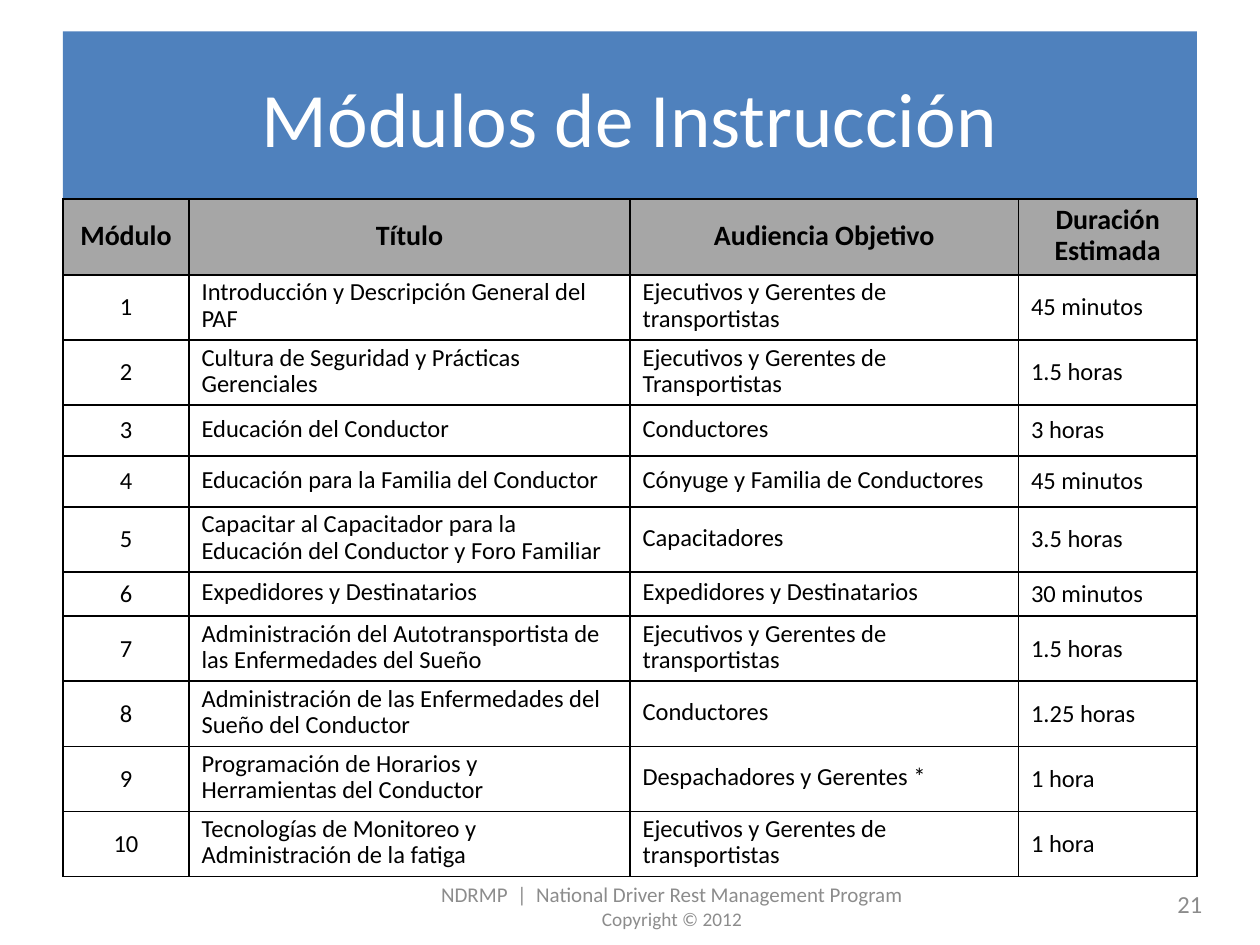
from dataclasses import dataclass

from lxml.etree import SubElement
from pptx import Presentation
from pptx.dml.color import RGBColor as RGB
from pptx.enum.shapes import MSO_SHAPE as SHAPE
from pptx.enum.text import MSO_ANCHOR as ANCHOR, PP_ALIGN as ALIGN
from pptx.oxml.ns import qn
from pptx.util import Pt


@dataclass(frozen=True)
class Theme:
    font: str = "Calibri"
    banner: RGB = RGB(0x4F, 0x81, 0xBD)
    header: RGB = RGB(0xA6, 0xA6, 0xA6)
    white: RGB = RGB(0xFF, 0xFF, 0xFF)
    black: RGB = RGB(0, 0, 0)
    muted: RGB = RGB(0x8C, 0x8C, 0x8C)
    title: int = 44
    head: int = 16
    body: int = 14
    footer: int = 12
    copyright: int = 11


THEME = Theme()
HEADERS = ("Módulo", "Título", "Audiencia Objetivo", "Duración Estimada")
MODULES = (
    ("Introducción y Descripción General del PAF", "Ejecutivos y Gerentes de transportistas", "45 minutos"),
    ("Cultura de Seguridad y Prácticas Gerenciales", "Ejecutivos y Gerentes de Transportistas", "1.5 horas"),
    ("Educación del Conductor", "Conductores", "3 horas"),
    ("Educación para la Familia del Conductor", "Cónyuge y Familia de Conductores", "45 minutos"),
    ("Capacitar al Capacitador para la Educación del Conductor y Foro Familiar", "Capacitadores", "3.5 horas"),
    ("Expedidores y Destinatarios", "Expedidores y Destinatarios", "30 minutos"),
    ("Administración del Autotransportista de las Enfermedades del Sueño",
     "Ejecutivos y Gerentes de transportistas", "1.5 horas"),
    ("Administración de las Enfermedades del Sueño del Conductor", "Conductores", "1.25 horas"),
    ("Programación de Horarios y Herramientas del Conductor", "Despachadores y Gerentes *", "1 hora"),
    ("Tecnologías de Monitoreo y Administración de la fatiga", "Ejecutivos y Gerentes de transportistas", "1 hora"),
)
COLUMN_WIDTHS = (72, 252, 222, 102)
HEADER_HEIGHT = 43.2
ROW_HEIGHT = 37.2
SHORT_ROWS = {3: 29.1, 4: 29.1, 6: 25.2}


def write(p, text, size, color=THEME.black, bold=False, align=ALIGN.LEFT, spacing=None):
    p.alignment = align
    if spacing:
        p.line_spacing = Pt(spacing)
    r = p.add_run()
    r.text = text
    r.font.name = THEME.font
    r.font.size = Pt(size)
    r.font.bold = bold
    r.font.color.rgb = color


def add_text_frame(slide, box):
    tf = slide.shapes.add_textbox(*map(Pt, box)).text_frame
    tf.word_wrap = True
    tf.vertical_anchor = ANCHOR.MIDDLE
    tf.margin_top = tf.margin_bottom = 0
    return tf


def add_banner(slide, box):
    sp = slide.shapes.add_shape(SHAPE.RECTANGLE, *map(Pt, box))
    sp.shadow.inherit = False
    sp.fill.solid()
    sp.fill.fore_color.rgb = THEME.banner
    sp.line.fill.background()
    left, top, width, height = box
    tf = add_text_frame(slide, (left, top + 3.6, width, height - 5.8))
    write(tf.paragraphs[0], "Módulos de Instrucción", THEME.title, color=THEME.white, align=ALIGN.CENTER)


def add_borders(cell):
    props = cell._tc.get_or_add_tcPr()
    for index, side in enumerate(("a:lnL", "a:lnR", "a:lnT", "a:lnB")):
        ln = props.makeelement(qn(side), {"w": str(Pt(1))})
        fill = SubElement(ln, qn("a:solidFill"))
        SubElement(fill, qn("a:srgbClr"), val=str(THEME.black))
        props.insert(index, ln)


def fill_cell(cell, text, fill=None, **text_format):
    cell.vertical_anchor = ANCHOR.MIDDLE
    if fill is None:
        cell.fill.background()
    else:
        cell.fill.solid()
        cell.fill.fore_color.rgb = fill
    write(cell.text_frame.paragraphs[0], text, **text_format)
    add_borders(cell)


def add_modules_table(slide, box):
    frame = slide.shapes.add_table(len(MODULES) + 1, len(HEADERS), *map(Pt, box))
    table = frame.table
    table.horz_banding = False
    for column, width in zip(table.columns, COLUMN_WIDTHS):
        column.width = Pt(width)
    table.rows[0].height = Pt(HEADER_HEIGHT)
    for c, text in enumerate(HEADERS):
        fill_cell(table.cell(0, c), text, fill=THEME.header, size=THEME.head,
                  bold=True, align=ALIGN.CENTER, spacing=18)
    aligns = (ALIGN.CENTER, ALIGN.LEFT, ALIGN.LEFT, ALIGN.LEFT)
    spacings = (None, 15, 15, None)
    for number, module in enumerate(MODULES, 1):
        table.rows[number].height = Pt(SHORT_ROWS.get(number, ROW_HEIGHT))
        for c, text in enumerate((str(number), *module)):
            fill_cell(table.cell(number, c), text, size=THEME.body, align=aligns[c], spacing=spacings[c])


def add_footer(slide, box):
    tf = add_text_frame(slide, box)
    write(tf.paragraphs[0], "NDRMP  |  National Driver Rest Management Program",
          THEME.footer, color=THEME.muted, align=ALIGN.CENTER)
    write(tf.add_paragraph(), "Copyright © 2012", THEME.copyright, color=THEME.muted, align=ALIGN.CENTER)


def add_slide_number(slide, box):
    tf = add_text_frame(slide, box)
    write(tf.paragraphs[0], "21", THEME.body, color=THEME.muted, align=ALIGN.RIGHT)


def main():
    prs = Presentation()
    prs.slide_width, prs.slide_height = Pt(720), Pt(540)
    slide = prs.slides.add_slide(prs.slide_layouts[6])
    add_banner(slide, (36, 18, 648, 95.8))
    add_slide_number(slide, (526.3, 501.8, 167.8, 28.8))
    add_footer(slide, (216, 503.6, 336, 28))
    add_modules_table(slide, (36, 113.8, 648, 387))
    prs.save("out.pptx")


if __name__ == "__main__":
    main()
